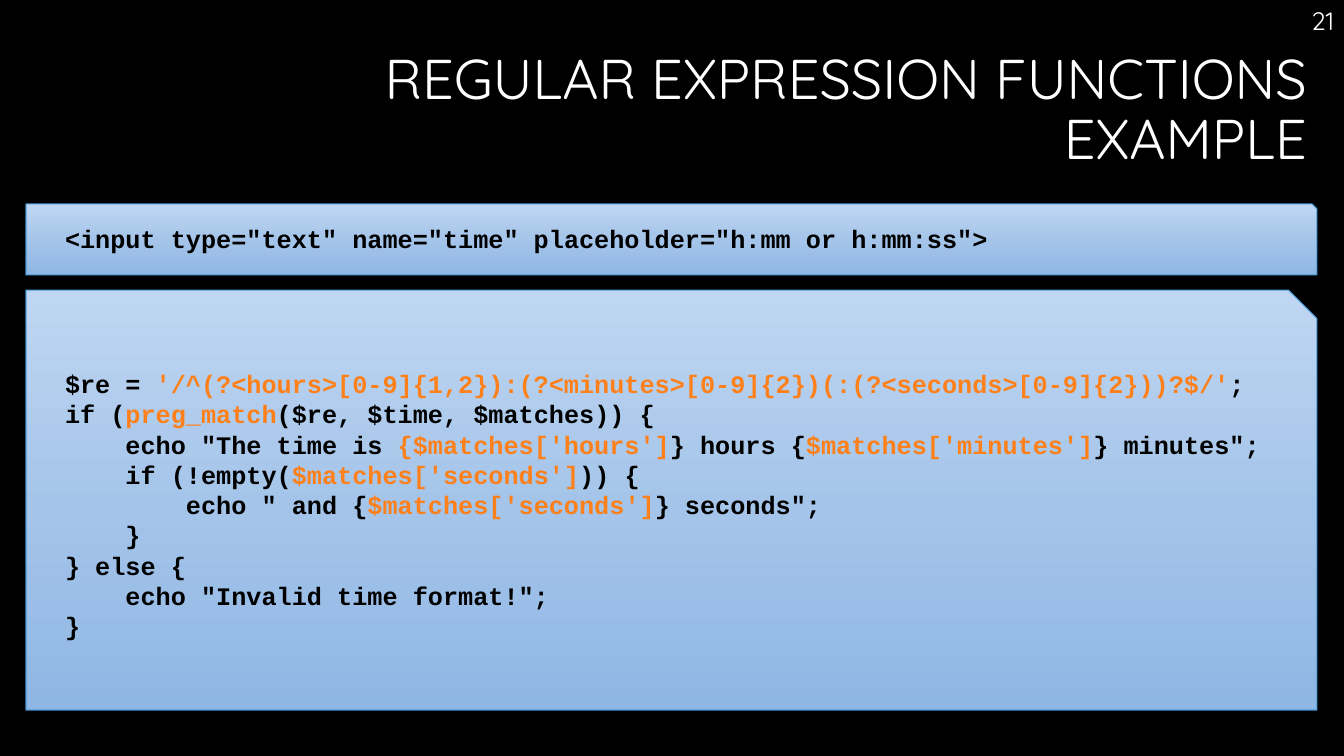
from copy import deepcopy

from pptx import Presentation
from pptx.dml.color import RGBColor
from pptx.enum.shapes import MSO_SHAPE as Shape
from pptx.enum.text import MSO_ANCHOR as Anchor, MSO_AUTO_SIZE as AutoSize, PP_ALIGN as Align
from pptx.util import Emu, Pt

PX = 914400 / 100.8
COLORS = {
    "background": "000000",
    "light": "FFFFFF",
    "code": "000000",
    "highlight": "FE801A",
    "border": "4A9BDC",
}
PANEL_GRADIENT = [(0, "BFD6F2"), (0.52, "A4C4E9"), (1, "8FB7E4")]
MARK = "~"  # encloses the highlighted parts of a code line

INPUT_TAG = ['<input type="text" name="time" placeholder="h:mm or h:mm:ss">']
TIME_SCRIPT = [
    "$re = ~'/^(?<hours>[0-9]{1,2}):(?<minutes>[0-9]{2})(:(?<seconds>[0-9]{2}))?$/'~;",
    "if (~preg_match~($re, $time, $matches)) {",
    "    echo \"The time is ~{$matches['hours']~} hours {~$matches['minutes']~} minutes\";",
    "    if (!empty(~$matches['seconds']~)) {",
    "        echo \" and {~$matches['seconds']~} seconds\";",
    "    }",
    "} else {",
    '    echo "Invalid time format!";',
    "}",
]


def px(length):
    return Emu(round(length * PX))


def rgb(name):
    return RGBColor.from_string(COLORS[name])


def add_span(para, text, size=18, font="Quicksand", color="light", bold=False):
    span = para.add_run()
    span.text = text
    span.font.size = Pt(size)
    span.font.name = font
    span.font.bold = bold
    span.font.color.rgb = rgb(color)
    return span


def set_title(page, lines):
    box = page.shapes.title
    box.left, box.top, box.width, box.height = px(26), px(46), px(1291), px(142)
    frame = box.text_frame
    frame.auto_size = AutoSize.NONE
    frame.vertical_anchor = Anchor.TOP
    para = frame.paragraphs[0]
    para.alignment = Align.RIGHT
    para.line_spacing = 0.9
    for index, line in enumerate(lines):
        if index:
            para.add_line_break()
        span = add_span(para, line, size=40)
    for line_break in para._p.findall("{*}br"):
        line_break.append(deepcopy(span.font._rPr))


def add_page_number(page, number):
    box = page.shapes.add_textbox(px(1053), 0, px(291), px(40))
    box.text_frame.word_wrap = True
    para = box.text_frame.paragraphs[0]
    para.alignment = Align.RIGHT
    add_span(para, number)


def fill_gradient(shape, stops):
    shape.fill.gradient()
    shape.fill.gradient_angle = 270
    stop_list = shape.fill._fill._gradFill.find("{*}gsLst")
    stop_list.append(deepcopy(stop_list[-1]))
    for stop, (position, color) in zip(shape.fill.gradient_stops, stops):
        stop.position = position
        stop.color.rgb = RGBColor.from_string(color)


def add_code_panel(page, top, height, lines):
    panel = page.shapes.add_shape(
        Shape.SNIP_1_RECTANGLE, px(26), px(top), px(1291), px(height))
    panel.adjustments[0] = 0.068
    panel.shadow.inherit = False
    fill_gradient(panel, PANEL_GRADIENT)
    panel.line.color.rgb = rgb("border")
    panel.line.width = Pt(0.75)
    frame = panel.text_frame
    frame.word_wrap = True
    frame.vertical_anchor = Anchor.MIDDLE
    frame.margin_left, frame.margin_top = px(39), 0
    frame.margin_right, frame.margin_bottom = px(10), px(5)
    for index, line in enumerate(lines):
        para = frame.add_paragraph() if index else frame.paragraphs[0]
        para.alignment = Align.LEFT
        for part, text in enumerate(line.split(MARK)):
            add_span(para, text, font="Courier New", bold=True,
                     color="highlight" if part % 2 else "code")


def main():
    deck = Presentation()
    deck.slide_width, deck.slide_height = px(1344), px(756)
    page = deck.slides.add_slide(deck.slide_layouts[5])
    page.background.fill.solid()
    page.background.fill.fore_color.rgb = rgb("background")
    set_title(page, ["REGULAR EXPRESSION FUNCTIONS", "EXAMPLE"])
    add_page_number(page, "21")
    add_code_panel(page, 290, 420, TIME_SCRIPT)
    add_code_panel(page, 204, 71, INPUT_TAG)
    deck.save("out.pptx")


if __name__ == "__main__":
    main()
